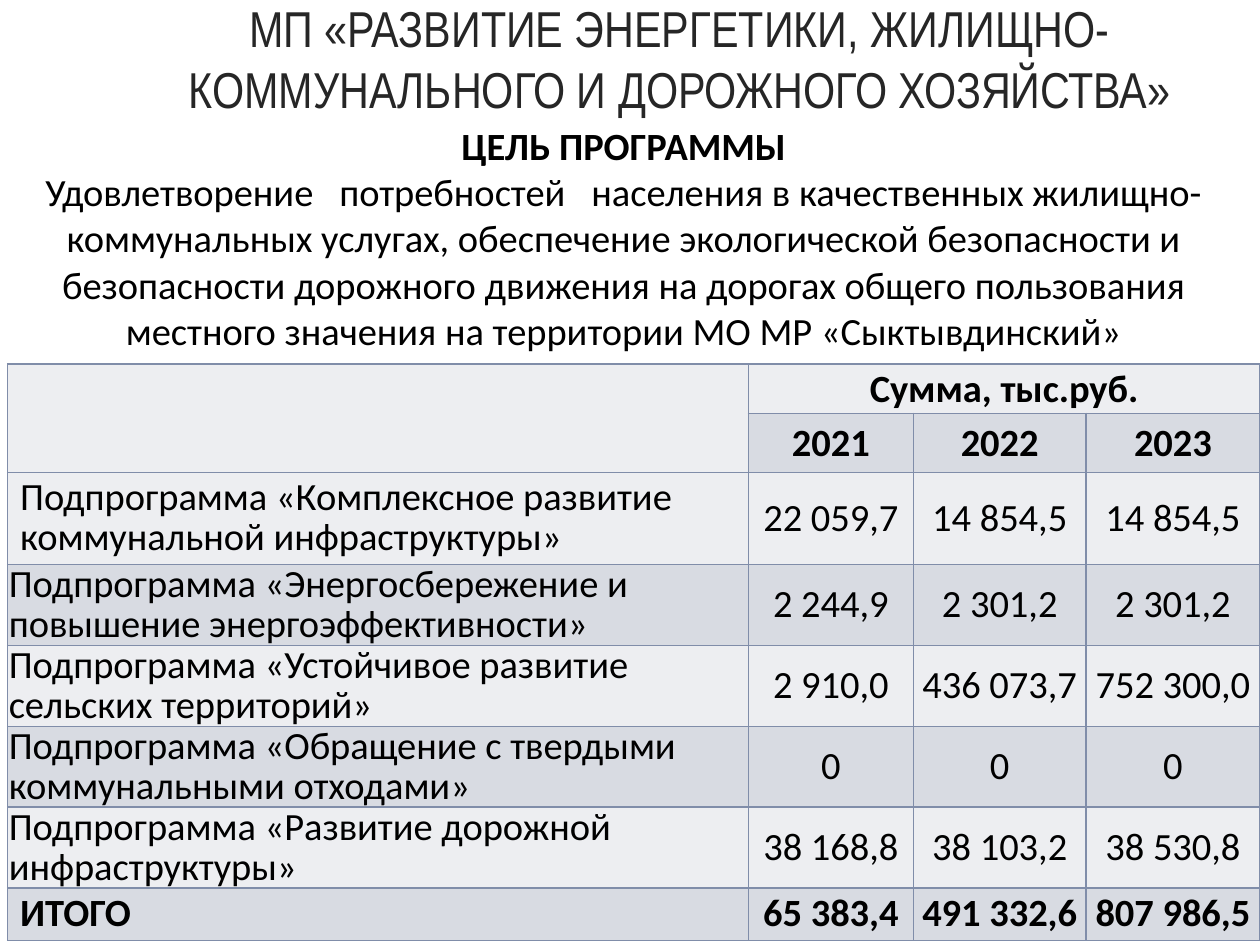
from lxml import etree
from pptx import Presentation
from pptx.dml.color import RGBColor
from pptx.enum import text
from pptx.oxml import ns
from pptx.util import Inches, Pt

BLACK = RGBColor(0, 0, 0)
TITLE_GRAY = RGBColor(0x26, 0x26, 0x26)
BANDS = (RGBColor(0xED, 0xEE, 0xF1), RGBColor(0xD8, 0xDB, 0xE2))
BORDER = RGBColor(0x80, 0x8D, 0xA9)

TITLE = "МП «РАЗВИТИЕ ЭНЕРГЕТИКИ, ЖИЛИЩНО-КОММУНАЛЬНОГО И ДОРОЖНОГО ХОЗЯЙСТВА»"
GOAL_HEADING = "ЦЕЛЬ ПРОГРАММЫ"
GOAL = (
    "Удовлетворение   потребностей   населения в качественных жилищно- "
    "коммунальных услугах, обеспечение экологической безопасности и "
    "безопасности дорожного движения на дорогах общего пользования "
    "местного значения на территории МО МР «Сыктывдинский»"
)
BUDGET = [
    ["", "Сумма, тыс.руб.", "", ""],
    ["", "2021", "2022", "2023"],
    ["Подпрограмма «Комплексное развитие коммунальной инфраструктуры»",
     "22 059,7", "14 854,5", "14 854,5"],
    ["Подпрограмма «Энергосбережение и повышение энергоэффективности»",
     "2 244,9", "2 301,2", "2 301,2"],
    ["Подпрограмма «Устойчивое развитие сельских территорий»",
     "2 910,0", "436 073,7", "752 300,0"],
    ["Подпрограмма «Обращение с твердыми коммунальными отходами»",
     "0", "0", "0"],
    ["Подпрограмма «Развитие дорожной инфраструктуры»",
     "38 168,8", "38 103,2", "38 530,8"],
    ["ИТОГО", "65 383,4", "491 332,6", "807 986,5"],
]
COLUMN_WIDTHS = [5.88, 1.31, 1.37, 1.38]
ROW_HEIGHTS = [0.39, 0.47, 0.73] + [0.64] * 4 + [0.41]
HEADER_ROWS = 2
FIRST_PROGRAM = 2
TOTAL_ROW = len(BUDGET) - 1


def add_span(para, words, size=22, name="Calibri", color=BLACK, bold=False):
    span = para.add_run()
    span.text = words
    span.font.size = Pt(size)
    span.font.name = name
    span.font.color.rgb = color
    span.font.bold = bold


def fill_title(page):
    title = page.shapes.title
    title.left, title.top = Inches(0.67), Inches(0)
    title.width, title.height = Inches(9.45), Inches(0.99)
    frame = title.text_frame
    frame.word_wrap = True
    frame.auto_size = text.MSO_AUTO_SIZE.NONE
    frame.vertical_anchor = text.MSO_ANCHOR.BOTTOM
    para = frame.paragraphs[0]
    para.alignment = text.PP_ALIGN.CENTER
    add_span(para, TITLE, 28.8, "Arial Narrow", TITLE_GRAY)


def add_goal(page):
    box = page.shapes.add_textbox(Inches(-0.05), Inches(0.92), Inches(10), Inches(2.02))
    frame = box.text_frame
    frame.word_wrap = True
    frame.auto_size = text.MSO_AUTO_SIZE.SHAPE_TO_FIT_TEXT
    heading, body = frame.paragraphs[0], frame.add_paragraph()
    for para, words in ((heading, GOAL_HEADING), (body, GOAL)):
        para.alignment = text.PP_ALIGN.CENTER
        add_span(para, words, bold=para is heading)


def outline_cell(cell):
    properties = cell._tc.get_or_add_tcPr()
    for side in ("a:lnL", "a:lnR", "a:lnT", "a:lnB"):
        line = etree.SubElement(properties, ns.qn(side), w=str(Pt(1)))
        solid = etree.SubElement(line, ns.qn("a:solidFill"))
        etree.SubElement(solid, ns.qn("a:srgbClr"), val=str(BORDER))


def format_cell(cell, row, column, words):
    outline_cell(cell)
    cell.fill.solid()
    cell.fill.fore_color.rgb = BANDS[row % 2]
    if column or row not in (FIRST_PROGRAM, TOTAL_ROW):
        cell.vertical_anchor = text.MSO_ANCHOR.MIDDLE
        cell.margin_left = cell.margin_right = cell.margin_top = Inches(0.01)
        cell.margin_bottom = Inches(0)
    if not words:
        return
    para = cell.text_frame.paragraphs[0]
    para.alignment = text.PP_ALIGN.CENTER if column else text.PP_ALIGN.LEFT
    if row >= HEADER_ROWS:
        para.line_spacing = 0.85
    add_span(para, words, bold=row < HEADER_ROWS or row == TOTAL_ROW)


def add_budget(page):
    table = page.shapes.add_table(
        len(BUDGET), len(COLUMN_WIDTHS), Inches(0.06), Inches(2.89),
        Inches(sum(COLUMN_WIDTHS)), Inches(sum(ROW_HEIGHTS))
    ).table
    for column, width in zip(table.columns, COLUMN_WIDTHS):
        column.width = Inches(width)
    for row, height in zip(table.rows, ROW_HEIGHTS):
        row.height = Inches(height)
    table.cell(0, 0).merge(table.cell(1, 0))
    table.cell(0, 1).merge(table.cell(0, 3))
    for row, values in enumerate(BUDGET):
        for column, words in enumerate(values):
            format_cell(table.cell(row, column), row, column, words)


def main():
    deck = Presentation()
    deck.slide_width, deck.slide_height = Inches(10), Inches(7.5)
    page = deck.slides.add_slide(deck.slide_layouts[5])
    fill_title(page)
    add_budget(page)
    add_goal(page)
    deck.save("out.pptx")


if __name__ == "__main__":
    main()
